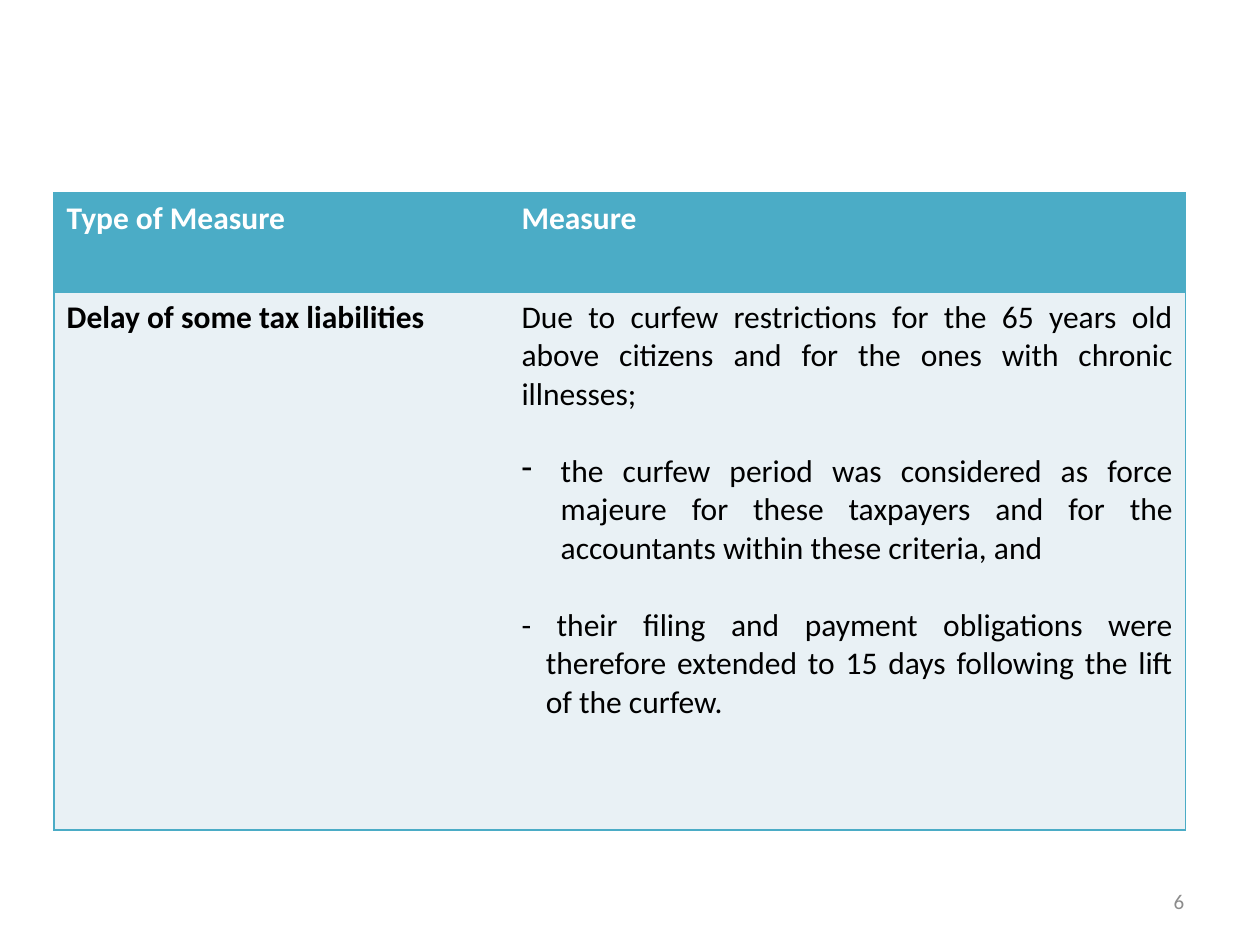
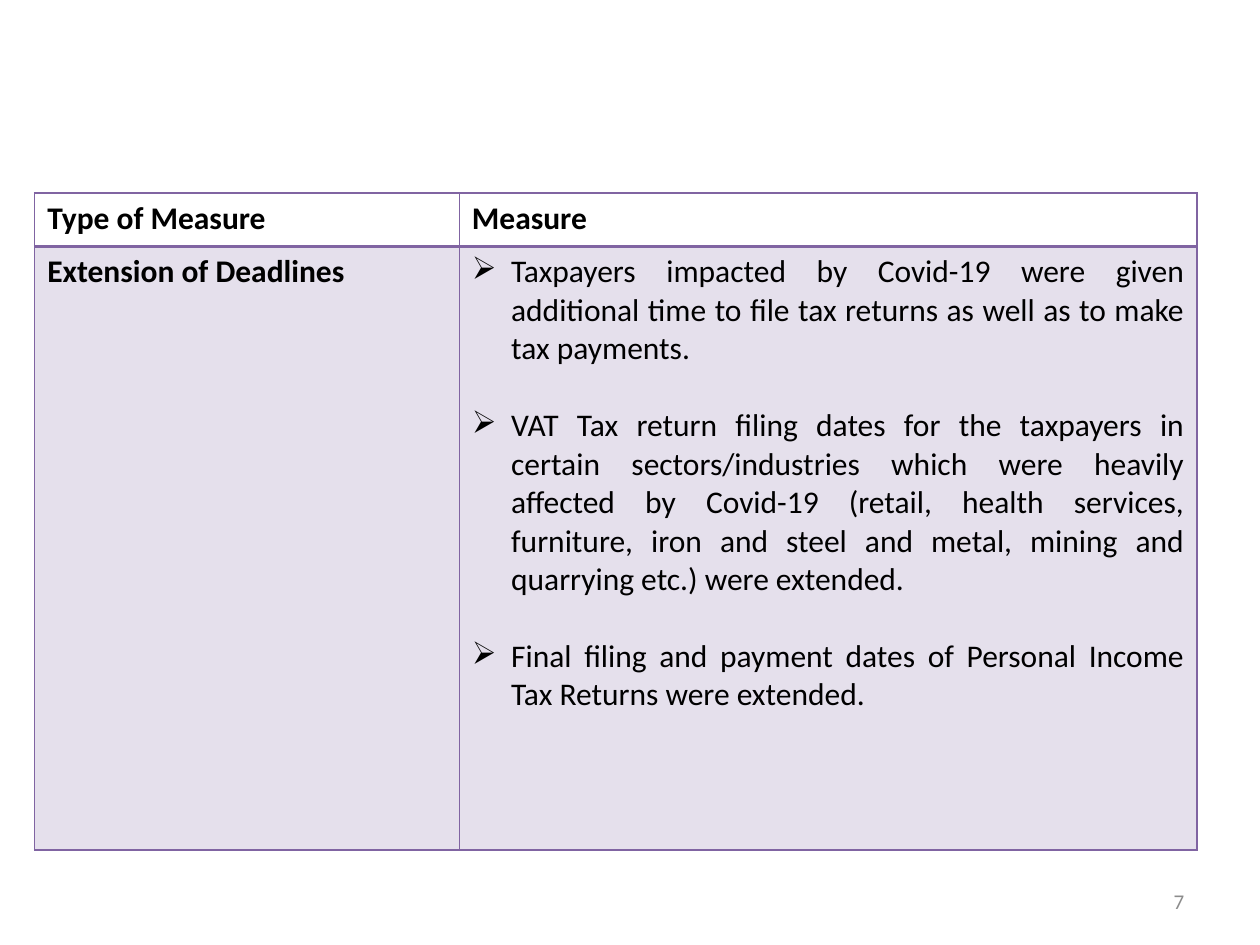
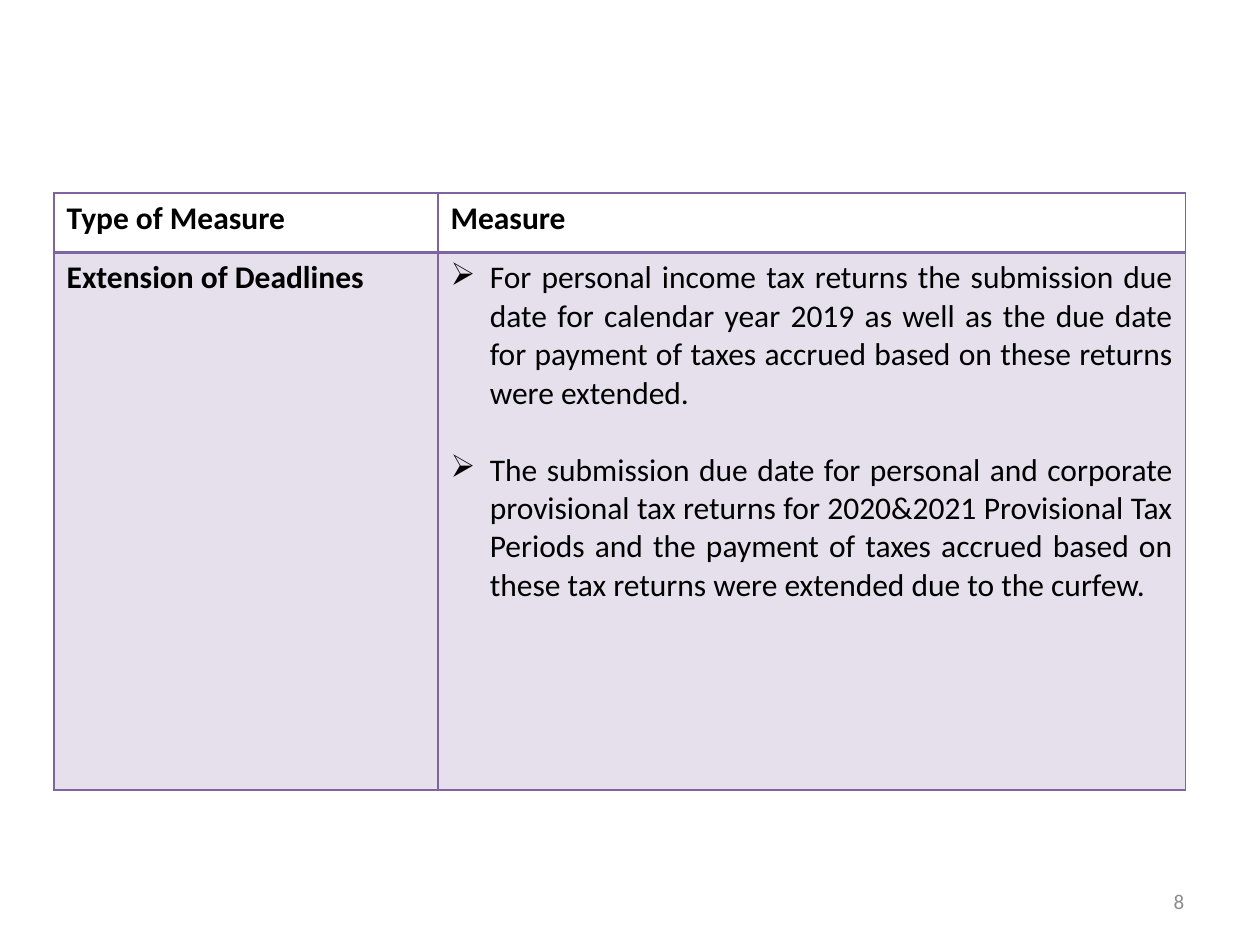
from copy import deepcopy
from dataclasses import dataclass

from lxml.etree import SubElement
from pptx import Presentation
from pptx.dml.color import RGBColor
from pptx.enum.text import PP_ALIGN as Align
from pptx.oxml.ns import qn
from pptx.util import Cm, Pt


@dataclass(frozen=True)
class Theme:
    font: str = "Calibri"
    text_size: int = 18
    number_size: int = 12
    paragraph_gap: int = 22
    black: str = "000000"
    white: str = "FFFFFF"
    grey: str = "8C8C8C"
    teal: str = "4BACC6"
    pale_teal: str = "E9F1F5"
    purple: str = "8064A2"
    purple_opacity: int = 20


theme = Theme()
TABLE_TOP = 3.89
NO_STYLE = "{2D5ABB26-0587-4C30-8999-92F81FD0307C}"
FIRST_NUMBER = 6
HEADINGS = ("Type of Measure", "Measure")

# Each measure is (bullet, hanging indent in cm, text); table lengths are in cm.
teal_look = dict(line=theme.teal, header_fill=theme.teal, header_text=theme.white,
                 body_fill=theme.pale_teal, opacity=None, divider=False, rule=1)
purple_look = dict(line=theme.purple, header_fill=None, header_text=theme.black,
                   body_fill=theme.purple, opacity=theme.purple_opacity,
                   divider=True, rule=2)
slides = [
    dict(look=teal_look, left=1.09, columns=(9.17, 13.64), rows=(2.0, 10.84),
         kind="Delay of some tax liabilities",
         measures=[
             (None, 0, "Due to curfew restrictions for the 65 years old above citizens "
                       "and for the ones with chronic illnesses;"),
             ("-", 0.79, "the curfew period was considered as force majeure for these "
                         "taxpayers and for the accountants within these criteria, and"),
             (None, 0.49, "- their filing and payment obligations were therefore extended "
                          "to 15 days following the lift of the curfew."),
         ]),
    dict(look=purple_look, left=0.7, columns=(8.56, 14.87), rows=(1.08, 12.16),
         kind="Extension of Deadlines",
         measures=[
             ("➢", 0.79, "Taxpayers impacted by Covid-19 were given additional time to "
                         "file tax returns as well as to make tax payments."),
             ("➢", 0.79, "VAT Tax return filing dates for the taxpayers in certain "
                         "sectors/industries which were heavily affected by Covid-19 "
                         "(retail, health services, furniture, iron and steel and metal, "
                         "mining and quarrying etc.) were extended."),
             ("➢", 0.79, "Final filing and payment dates of Personal Income Tax Returns "
                         "were extended."),
         ]),
    dict(look=purple_look, left=1.09, columns=(7.74, 15.07), rows=(1.2, 10.84),
         kind="Extension of Deadlines",
         measures=[
             ("➢", 0.79, "For personal income tax returns the submission due date for "
                         "calendar year 2019 as well as the due date for payment of taxes "
                         "accrued based on these returns were extended."),
             ("➢", 0.79, "The submission due date for personal and corporate provisional "
                         "tax returns for 2020&2021 Provisional Tax Periods and the "
                         "payment of taxes accrued based on these tax returns were "
                         "extended due to the curfew."),
         ]),
]


def style(paragraph, color, size=theme.text_size, bold=False):
    for run in paragraph.runs:
        run.font.name = theme.font
        run.font.size = Pt(size)
        run.font.bold = bold
        run.font.color.rgb = RGBColor.from_string(color)


def paint(cell, borders, color, fill, opacity=None):
    """Draw the cell's borders, given as (side, points), and then its fill."""
    properties = cell._tc.get_or_add_tcPr()
    for side, points in borders:
        line = SubElement(properties, qn(f"a:ln{side}"), w=str(Pt(points)))
        if points:
            SubElement(SubElement(line, qn("a:solidFill")), qn("a:srgbClr"), val=color)
        else:
            SubElement(line, qn("a:noFill"))
    if fill is None:
        cell.fill.background()
        return
    cell.fill.solid()
    cell.fill.fore_color.rgb = RGBColor.from_string(fill)
    if opacity:
        fill_color = properties.find(f"{qn('a:solidFill')}/{qn('a:srgbClr')}")
        SubElement(fill_color, qn("a:alpha"), val=str(opacity * 1000))


presentation = Presentation()
presentation.slide_width, presentation.slide_height = Cm(25.4), Cm(19.05)
blank_layout = presentation.slide_layouts[6]
number_element = next(shape.element for shape in blank_layout.placeholders
                      if "Slide Number" in shape.name)

for number, content in enumerate(slides, FIRST_NUMBER):
    look = content["look"]
    slide = presentation.slides.add_slide(blank_layout)

    slide.shapes._spTree.append(deepcopy(number_element))
    number_frame = slide.placeholders[number_element.ph_idx].text_frame
    number_frame.text = str(number)
    number_frame.paragraphs[0].alignment = Align.RIGHT
    style(number_frame.paragraphs[0], theme.grey, theme.number_size)

    table = slide.shapes.add_table(
        2, 2, Cm(content["left"]), Cm(TABLE_TOP),
        Cm(sum(content["columns"])), Cm(sum(content["rows"]))).table
    table._tbl.tblPr.find(qn("a:tableStyleId")).text = NO_STYLE
    table.horz_banding = False
    for column, width in zip(table.columns, content["columns"]):
        column.width = Cm(width)
    for row, height in zip(table.rows, content["rows"]):
        row.height = Cm(height)

    for index, heading in enumerate(HEADINGS):
        header, body = table.cell(0, index), table.cell(1, index)
        sides = [("L", 1 if index == 0 else int(look["divider"])),
                 ("R", 1 if index == 1 else int(look["divider"]))]
        paint(header, sides + [("T", 1), ("B", look["rule"])],
              look["line"], look["header_fill"])
        paint(body, sides + [("T", look["rule"]), ("B", 1)],
              look["line"], look["body_fill"], look["opacity"])
        header.text_frame.text = heading
        style(header.text_frame.paragraphs[0], look["header_text"], bold=True)

    kind_frame = table.cell(1, 0).text_frame
    kind_frame.text = content["kind"]
    style(kind_frame.paragraphs[0], theme.black, bold=True)

    measure_frame = table.cell(1, 1).text_frame
    measure_frame.text = "\n".join(text for _, _, text in content["measures"])
    for position, paragraph in enumerate(measure_frame.paragraphs):
        bullet, indent, _ = content["measures"][position]
        paragraph.alignment = Align.JUSTIFY
        if position:
            paragraph.space_before = Pt(theme.paragraph_gap)
        properties = paragraph._p.get_or_add_pPr()
        properties.set("marL", str(Cm(indent)))
        properties.set("indent", str(-Cm(indent)))
        if bullet:
            SubElement(properties, qn("a:buChar"), char=bullet)
        style(paragraph, theme.black)

presentation.save("out.pptx")
